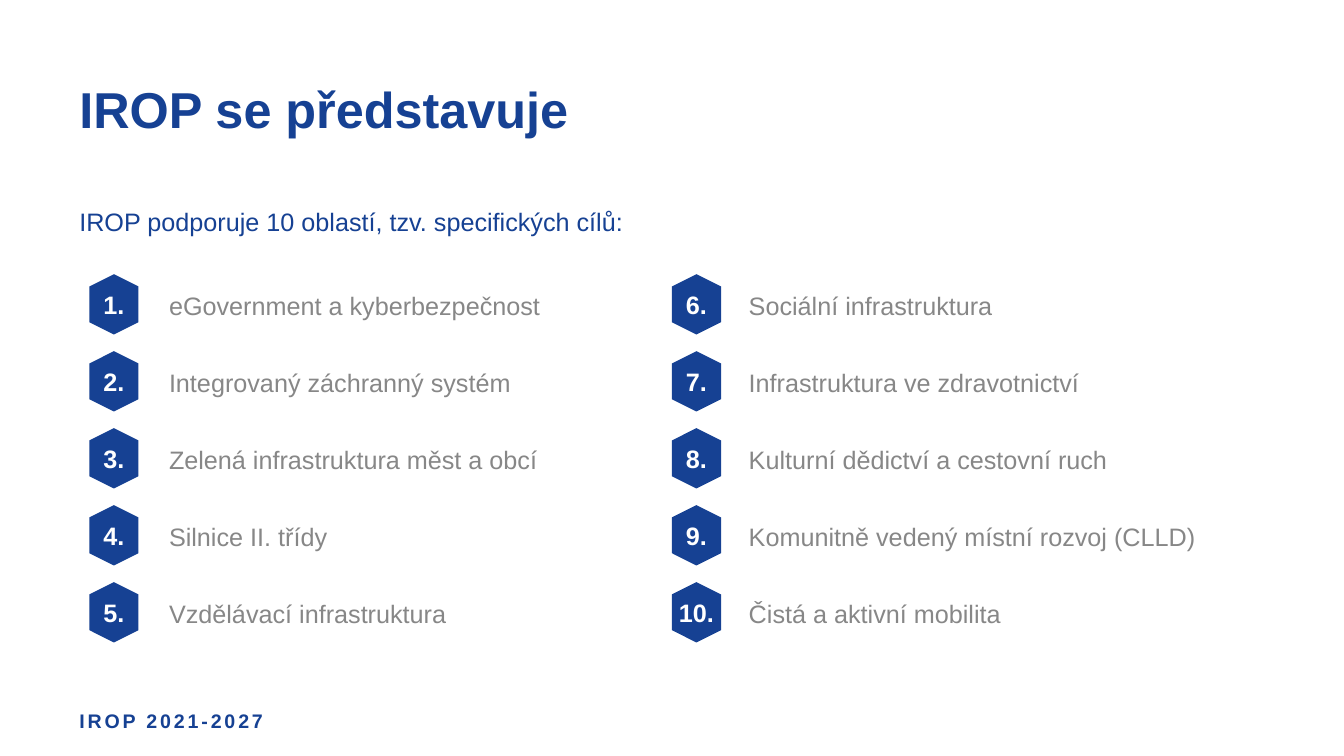
from pptx import Presentation
from pptx.dml.color import RGBColor
from pptx.enum.shapes import MSO_SHAPE
from pptx.enum.text import MSO_ANCHOR, PP_ALIGN
from pptx.util import Cm, Pt

HEXAGON = MSO_SHAPE.HEXAGON
MIDDLE = MSO_ANCHOR.MIDDLE
LEFT, CENTER = PP_ALIGN.LEFT, PP_ALIGN.CENTER

BLUE, GREY, WHITE = "164193", "878787", "FFFFFF"
BLANK_LAYOUT = 6
MARGIN = 1.75
ROW_TOP, ROW_PITCH, ROW_HEIGHT = 6.96, 1.94, 1.42
HEXAGON_LENGTH, HEXAGON_BREADTH = 1.52, 1.24
GOAL_WIDTH = 12.9

COLUMNS = [
    (2.11, 4.01, [
        "eGovernment a kyberbezpečnost",
        "Integrovaný záchranný systém",
        "Zelená infrastruktura měst a obcí",
        "Silnice II. třídy",
        "Vzdělávací infrastruktura",
    ]),
    (16.79, 18.62, [
        "Sociální infrastruktura",
        "Infrastruktura ve zdravotnictví",
        "Kulturní dědictví a cestovní ruch",
        "Komunitně vedený místní rozvoj (CLLD)",
        "Čistá a aktivní mobilita",
    ]),
]


def color(value):
    return RGBColor.from_string(value)


def add_text(page, text, left, top, width, height, hue,
             size=18, bold=False, align=LEFT, line_spacing=1.0):
    box = page.shapes.add_textbox(Cm(left), Cm(top), Cm(width), Cm(height))
    frame = box.text_frame
    frame.word_wrap = True
    frame.vertical_anchor = MIDDLE
    para = frame.paragraphs[0]
    for name, value in {"alignment": align, "line_spacing": line_spacing}.items():
        setattr(para, name, value)
    span = para.add_run()
    span.text = text
    for name, value in {"name": "Arial", "size": Pt(size), "bold": bold}.items():
        setattr(span.font, name, value)
    span.font.color.rgb = color(hue)
    return span


def add_hexagon(page, left, middle):
    badge = page.shapes.add_shape(
        HEXAGON, Cm(left), Cm(middle - HEXAGON_BREADTH / 2),
        Cm(HEXAGON_LENGTH), Cm(HEXAGON_BREADTH))
    badge.rotation = 90
    badge.shadow.inherit = False
    badge.fill.solid()
    badge.fill.fore_color.rgb = color(BLUE)
    badge.line.fill.background()


def add_goal(page, number, goal, badge_left, goal_left, top):
    add_hexagon(page, badge_left, top + ROW_HEIGHT / 2)
    add_text(page, f"{number}.", badge_left, top, HEXAGON_LENGTH, ROW_HEIGHT,
             WHITE, bold=True, align=CENTER)
    add_text(page, goal, goal_left, top, GOAL_WIDTH, ROW_HEIGHT,
             GREY, line_spacing=1.1)


def main():
    deck = Presentation()
    deck.slide_width, deck.slide_height = Cm(33.87), Cm(19.05)
    page = deck.slides.add_slide(deck.slide_layouts[BLANK_LAYOUT])

    add_text(page, "IROP se představuje", MARGIN, 1.9, 30.53, 1.88,
             BLUE, size=36, bold=True, line_spacing=0.9)
    add_text(page, "IROP podporuje 10 oblastí, tzv. specifických cílů:",
             MARGIN, 5.08, 19.69, 1.02, BLUE)

    number = 1
    for badge_left, goal_left, goals in COLUMNS:
        for row, goal in enumerate(goals):
            add_goal(page, number, goal, badge_left, goal_left,
                     ROW_TOP + row * ROW_PITCH)
            number += 1

    footer = add_text(page, "IROP 2021-2027", MARGIN, 17.65, 18.26, 1.02,
                      BLUE, size=14, bold=True)
    footer.font._element.set("spc", "200")

    deck.save("out.pptx")


if __name__ == "__main__":
    main()
